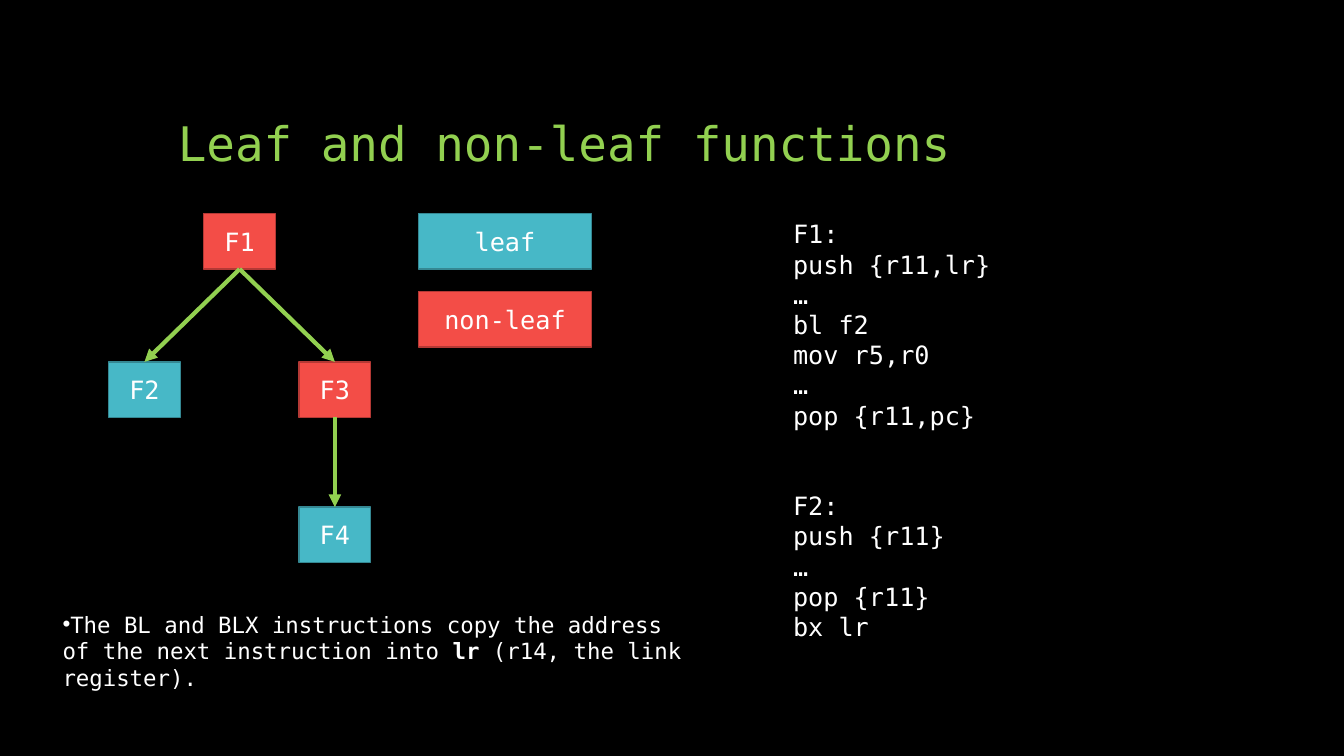
import pptx
import pptx.util
import pptx.dml.color
import pptx.enum.shapes
import pptx.enum.text
import pptx.oxml
import lxml.etree

Pt = pptx.util.Pt
RGBColor = pptx.dml.color.RGBColor
ANCHOR = pptx.enum.text.MSO_ANCHOR

FONT = "DejaVu Sans Mono"
BLACK = RGBColor(0x00, 0x00, 0x00)
WHITE = RGBColor(0xFF, 0xFF, 0xFF)
GREEN = RGBColor(0x92, 0xD0, 0x50)
TEAL = RGBColor(0x47, 0xB8, 0xC7)
DARK_TEAL = RGBColor(0x35, 0x88, 0x93)
RED = RGBColor(0xF3, 0x4D, 0x47)
DARK_RED = RGBColor(0xB4, 0x39, 0x35)

# Content
TITLE = "Leaf and non-leaf functions"
KINDS = {"leaf": (TEAL, DARK_TEAL), "non-leaf": (RED, DARK_RED)}
FUNCTIONS = {  # name: (kind, column, level)
    "F1": ("non-leaf", 1, 0),
    "F2": ("leaf", 0, 1),
    "F3": ("non-leaf", 2, 1),
    "F4": ("leaf", 2, 2),
}
CALLS = [("F1", "F2"), ("F1", "F3"), ("F3", "F4")]
LISTINGS = [
    ["F1:", "push {r11,lr}", "…", "bl f2", "mov r5,r0", "…", "pop {r11,pc}"],
    ["F2:", "push {r11}", "…", "pop {r11}", "bx lr"],
]
NOTE = [
    ("The BL and BLX instructions copy the address of the next instruction into ", False),
    ("lr", True),
    (" (r14, the link register).", False),
]

# Layout, in points
TOP = 152.6
BOX_WIDTH, BOX_HEIGHT = 51.2, 39.6
FIRST_CENTER, COLUMN_STEP = 103.2, 68
LEVEL_TOPS = [TOP, 258.5, 362.2]
LEGEND_LEFT, LEGEND_WIDTH, LEGEND_STEP = 298.8, 123.8, 55.6
LISTING_GAP = 43

deck = pptx.Presentation()
deck.slide_width, deck.slide_height = Pt(960), Pt(540)
page = deck.slides.add_slide(deck.slide_layouts[6])
page.background.fill.solid()
page.background.fill.fore_color.rgb = BLACK


def style(para, size, color=WHITE):
    para.font.name = FONT
    para.font.size = Pt(size)
    para.font.color.rgb = color


def add_text(left, top, width, height, anchor):
    box = page.shapes.add_textbox(Pt(left), Pt(top), Pt(width), Pt(height))
    box.text_frame.word_wrap = True
    box.text_frame.vertical_anchor = anchor
    return box.text_frame


def add_box(label, kind, left, top, width):
    box = page.shapes.add_shape(pptx.enum.shapes.MSO_SHAPE.RECTANGLE,
                                Pt(left), Pt(top), Pt(width), Pt(BOX_HEIGHT))
    box.shadow.inherit = False
    fill, edge = KINDS[kind]
    box.fill.solid()
    box.fill.fore_color.rgb = fill
    box.line.color.rgb = edge
    box.line.width = Pt(1)
    box.text_frame.vertical_anchor = ANCHOR.MIDDLE
    para = box.text_frame.paragraphs[0]
    para.text = label
    para.alignment = pptx.enum.text.PP_ALIGN.CENTER
    style(para, 18)


def add_arrow(start, end):
    arrow = page.shapes.add_connector(pptx.enum.shapes.MSO_CONNECTOR.STRAIGHT,
                                      *(Pt(value) for value in start + end))
    arrow.line.color.rgb = GREEN
    arrow.line.width = Pt(3)
    line = arrow.line._get_or_add_ln()
    lxml.etree.SubElement(line, pptx.oxml.ns.qn("a:tailEnd"), type="triangle")
    lxml.etree.SubElement(arrow._element.spPr, pptx.oxml.ns.qn("a:effectLst"))


# Title
title = add_text(120, 36, 720, 90, ANCHOR.BOTTOM).paragraphs[0]
title.text = TITLE
title.line_spacing = 0.9
style(title, 34, GREEN)

# Call tree
spots = {}
for name, (kind, column, level) in FUNCTIONS.items():
    center, top = FIRST_CENTER + column * COLUMN_STEP, LEVEL_TOPS[level]
    spots[name] = (center, top)
    add_box(name, kind, center - BOX_WIDTH / 2, top, BOX_WIDTH)
for caller, callee in CALLS:
    center, top = spots[caller]
    add_arrow((center, top + BOX_HEIGHT), spots[callee])

# Legend
for row, kind in enumerate(KINDS):
    add_box(kind, kind, LEGEND_LEFT, TOP + row * LEGEND_STEP, LEGEND_WIDTH)

# Assembly listings
frame = add_text(559.4, TOP, 294.5, 334, ANCHOR.TOP)
para = frame.paragraphs[0]
for number, listing in enumerate(LISTINGS):
    for row, code in enumerate(listing):
        if number or row:
            para = frame.add_paragraph()
        para.text = code
        style(para, 18)
        if number and not row:
            para.space_before = Pt(LISTING_GAP)

# Note on the link register
note = add_text(37.6, 442, 471, 46, ANCHOR.MIDDLE).paragraphs[0]
style(note, 16)
for text, bold in NOTE:
    span = note.add_run()
    span.text = text
    span.font.bold = bold
properties = note._p.get_or_add_pPr()
properties.set("marL", "0")
properties.set("indent", "0")
bullet_font = lxml.etree.Element(pptx.oxml.ns.qn("a:buFont"), typeface="Arial")
bullet = lxml.etree.Element(pptx.oxml.ns.qn("a:buChar"), char="•")
properties.insert(0, bullet_font)
properties.insert(1, bullet)

deck.save("out.pptx")
